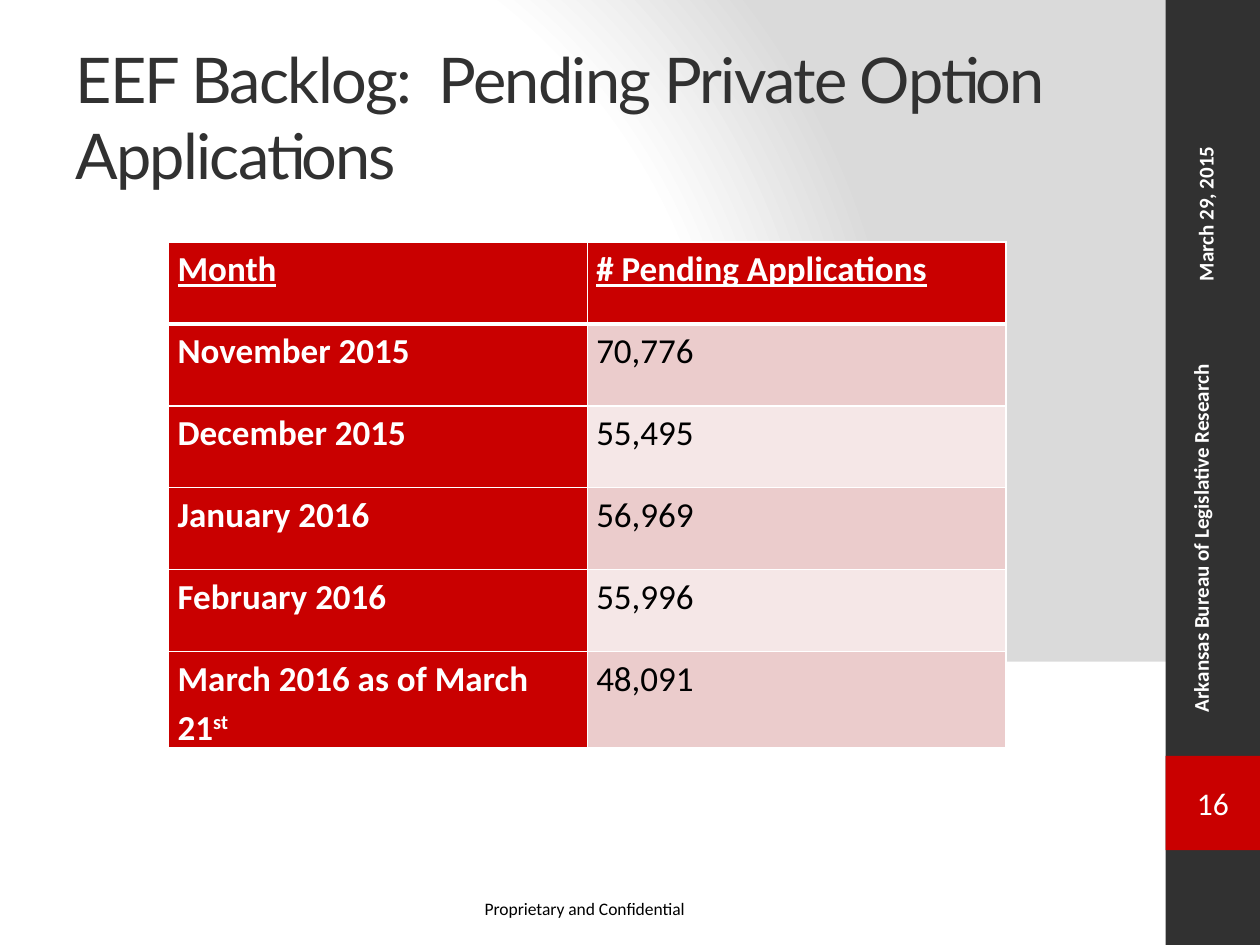
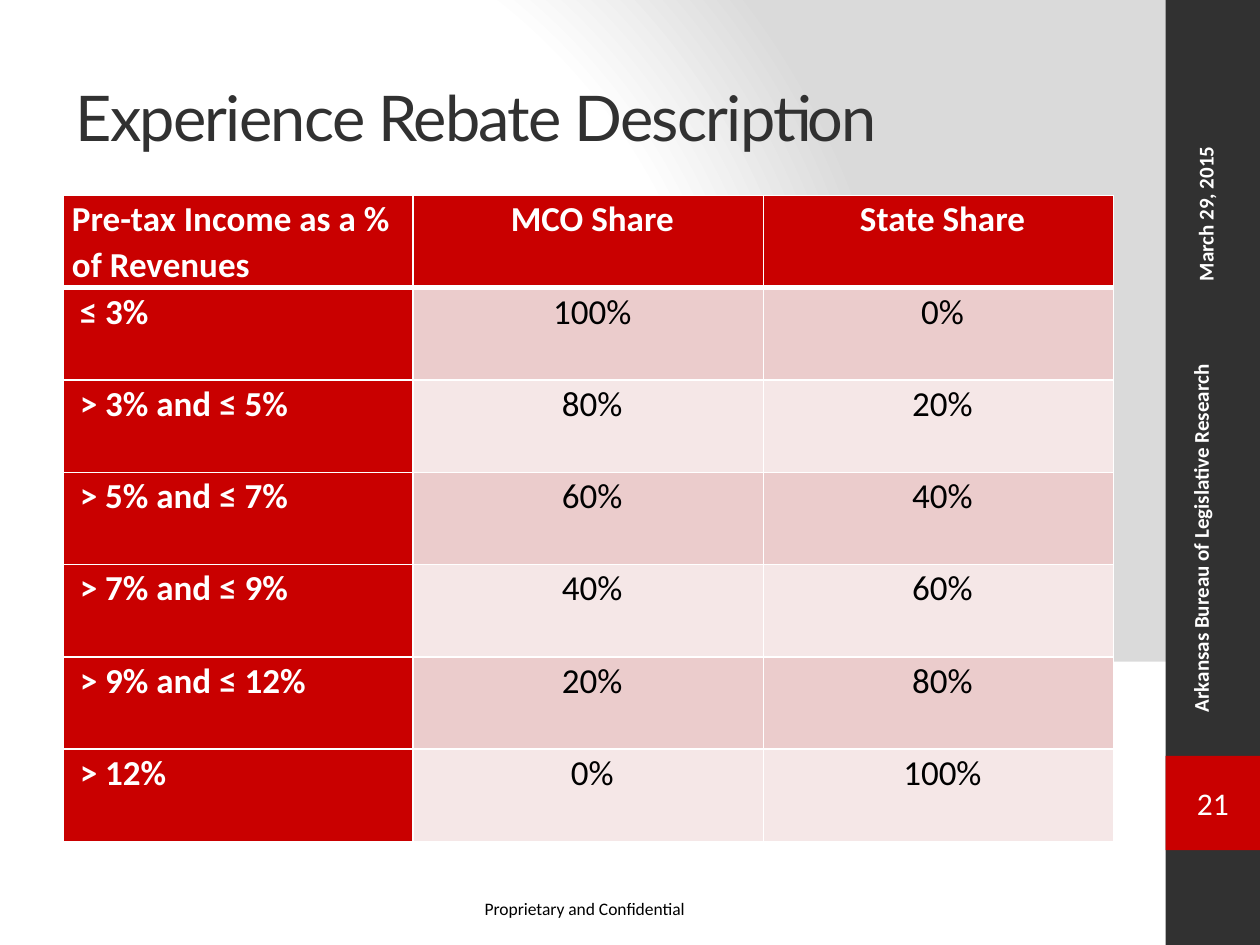
"""Build two table slides with a shared side band, title and footer."""
from lxml import etree
from pptx import Presentation
from pptx import util as u
from pptx.dml.color import RGBColor
from pptx.enum import shapes, text
from pptx.oxml.ns import qn

WHITE = RGBColor(0xFF, 0xFF, 0xFF)
BLACK = RGBColor(0, 0, 0)
CHARCOAL = RGBColor(0x31, 0x31, 0x31)
RED = RGBColor(0xC9, 0, 0)
PINK = RGBColor(0xEB, 0xCC, 0xCC)
PALE_PINK = RGBColor(0xF5, 0xE7, 0xE7)
GRAY = RGBColor(0xDA, 0xDA, 0xDA)

LEFT, CENTER = text.PP_ALIGN.LEFT, text.PP_ALIGN.CENTER
FOOTER = "Proprietary and Confidential"
ORGANIZATION = "Arkansas Bureau of Legislative Research"
DATE = "March 29, 2015"

SLIDES = [
    {
        "title": "EEF Backlog:  Pending Private Option Applications",
        "number": "16",
        "rows": [
            ("Month", "# Pending Applications"),
            ("November 2015", "70,776"),
            ("December 2015", "55,495"),
            ("January 2016", "56,969"),
            ("February 2016", "55,996"),
            ("March 2016 as of March 21", "48,091"),
        ],
        "last_label_suffix": "st",
        "origin": (3.4, 4.88), "column_width": 8.44, "row_height": 1.65,
        "line_spacing": 1.15, "underline_header": True,
        "value_align": LEFT, "inset": 0.18,
    },
    {
        "title": "Experience Rebate Description",
        "number": "21",
        "rows": [
            ("Pre-tax Income as a % of Revenues", "MCO Share", "State Share"),
            ("≤ 3%", "100%", "0%"),
            ("> 3% and ≤ 5%", "80%", "20%"),
            ("> 5% and ≤ 7%", "60%", "40%"),
            ("> 7% and ≤ 9%", "40%", "60%"),
            ("> 9% and ≤ 12%", "20%", "80%"),
            ("> 12%", "0%", "100%"),
        ],
        "last_label_suffix": "",
        "origin": (1.27, 3.94), "column_width": 7.06, "row_height": 1.86,
        "line_spacing": 1.07, "underline_header": False,
        "value_align": CENTER, "inset": 0.34,
    },
]


def write(frame, content, size=20, color=WHITE, font="Calibri", bold=False, underline=False,
          align=LEFT, line_spacing=None, tracking=None, superscript=""):
    paragraph = frame.paragraphs[0]
    paragraph.alignment = align
    paragraph.line_spacing = line_spacing
    for piece in filter(None, (content, superscript)):
        run = paragraph.add_run()
        run.text = piece
        run.font.size = u.Pt(size)
        run.font.name = font
        run.font.bold = bold
        run.font.underline = underline
        run.font.color.rgb = color
        if tracking:
            run.font._element.set("spc", str(tracking))
    if superscript:
        run.font._element.set("baseline", "30000")


def add_box(slide, box, content, anchor=text.MSO_ANCHOR.TOP, wrap=True, vertical=False, **style):
    frame = slide.shapes.add_textbox(*map(u.Cm, box)).text_frame
    frame.word_wrap = wrap
    frame.vertical_anchor = anchor
    if vertical:
        frame._txBody.bodyPr.set("vert", "vert270")
    write(frame, content, **style)


def add_block(slide, box, color):
    block = slide.shapes.add_shape(shapes.MSO_SHAPE.RECTANGLE, *map(u.Cm, box))
    block.shadow.inherit = False
    block.fill.solid()
    block.fill.fore_color.rgb = color
    block.line.fill.background()
    return block


def set_background(master):
    master.background.fill.gradient()
    gradient = next(master.element.iter(qn("a:gradFill")))
    for child in list(gradient):
        gradient.remove(child)
    stops = etree.SubElement(gradient, qn("a:gsLst"))
    for position, color in ((0, WHITE), (75, WHITE), (100, GRAY)):
        stop = etree.SubElement(stops, qn("a:gs"), pos=str(position * 1000))
        etree.SubElement(stop, qn("a:srgbClr"), val=str(color))
    circle = etree.SubElement(gradient, qn("a:path"))
    circle.set("path", "circle")
    etree.SubElement(circle, qn("a:fillToRect"), l="20000", t="50000", r="100000", b="50000")


def set_borders(cell, row):
    properties = cell._tc.get_or_add_tcPr()
    widths = {"L": 1, "R": 1, "T": 3 if row == 1 else 1, "B": 3 if row == 0 else 1}
    for index, (side, width) in enumerate(widths.items()):
        line = etree.Element(qn(f"a:ln{side}"), w=str(u.Pt(width)))
        fill = etree.SubElement(line, qn("a:solidFill"))
        etree.SubElement(fill, qn("a:srgbClr"), val=str(WHITE))
        properties.insert(index, line)


def add_frame(slide, title, number):
    add_block(slide, (0, 13.34, 23.7, 5.71), WHITE)
    add_block(slide, (23.5, 0, 1.9, 19.05), CHARCOAL)
    number_block = add_block(slide, (23.5, 15.24, 1.9, 1.9), RED)
    number_block.text_frame.vertical_anchor = text.MSO_ANCHOR.MIDDLE
    write(number_block.text_frame, number, size=18, align=CENTER)
    add_box(slide, (9.52, 17.98, 4.6, 0.69), FOOTER, wrap=False, size=10, color=BLACK)
    add_box(slide, (23.82, 5.92, 1.02, 8.69), ORGANIZATION, vertical=True, size=12, bold=True)
    add_box(slide, (23.92, 1.27, 1.55, 4.65), DATE, vertical=True, size=12, bold=True)
    add_box(slide, (1.27, 0.76, 21.16, 3.18), title, anchor=text.MSO_ANCHOR.MIDDLE,
            size=36, color=CHARCOAL, font="Lato", tracking=-100)


def add_data_table(slide, data):
    rows = data["rows"]
    row_count, column_count = len(rows), len(rows[0])
    left, top = data["origin"]
    size = column_count * data["column_width"], row_count * data["row_height"]
    table = slide.shapes.add_table(row_count, column_count, *map(u.Cm, (left, top, *size))).table
    for row, values in enumerate(rows):
        table.rows[row].height = u.Cm(data["row_height"])
        for column, value in enumerate(values):
            table.columns[column].width = u.Cm(data["column_width"])
            cell = table.cell(row, column)
            label = row == 0 or column == 0
            cell.margin_left = u.Cm(data["inset"] if row or column else 0.18)
            cell.margin_right = u.Cm(0.18)
            cell.margin_top = cell.margin_bottom = 0
            cell.fill.solid()
            cell.fill.fore_color.rgb = RED if label else PINK if row % 2 else PALE_PINK
            set_borders(cell, row)
            last_label = column == 0 and row == row_count - 1
            write(cell.text_frame, value, color=WHITE if label else BLACK, bold=label,
                  underline=row == 0 and data["underline_header"],
                  align=data["value_align"] if column else LEFT,
                  line_spacing=data["line_spacing"],
                  superscript=data["last_label_suffix"] if last_label else "")


def main():
    presentation = Presentation()
    presentation.slide_width, presentation.slide_height = u.Cm(25.4), u.Cm(19.05)
    set_background(presentation.slide_master)
    for data in SLIDES:
        slide = presentation.slides.add_slide(presentation.slide_layouts[6])
        add_frame(slide, data["title"], data["number"])
        add_data_table(slide, data)
    presentation.save("out.pptx")


if __name__ == "__main__":
    main()
